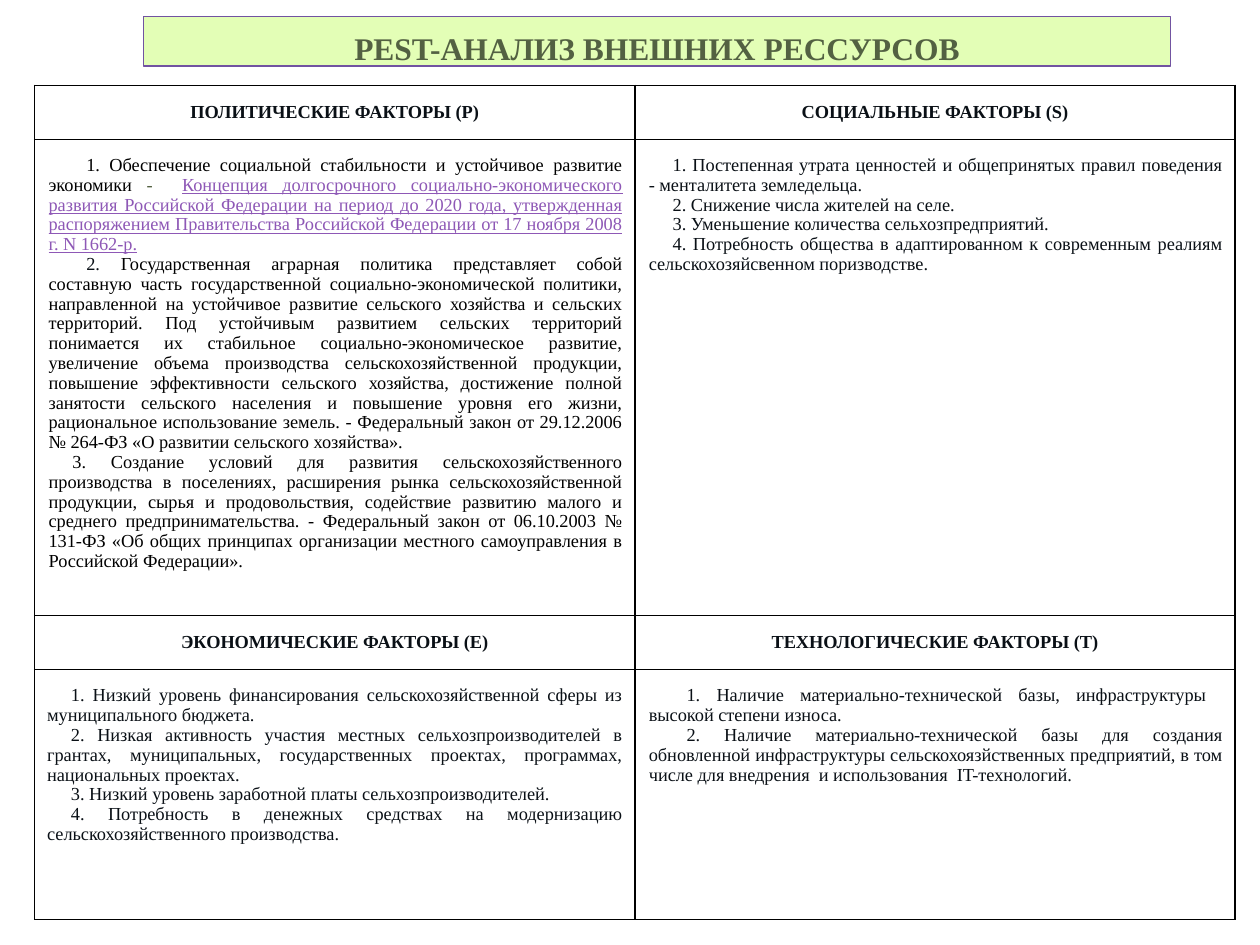
from dataclasses import dataclass
from pptx import Presentation
from pptx.dml.color import RGBColor as Rgb
from pptx.enum.shapes import MSO_SHAPE as Shape
from pptx.enum.text import MSO_ANCHOR as Anchor, PP_ALIGN as Align
from pptx.oxml import parse_xml
from pptx.oxml.ns import nsdecls
from pptx.util import Cm, Pt


@dataclass(frozen=True)
class Theme:
    """Holds the colours, font and type sizes of the slide."""
    font: str = "Times New Roman"
    title: float = 18
    body: float = 10.5
    lead: float = 0.97
    rule: float = 1
    ink: str = "0A1016"
    black: str = "000000"
    olive: str = "536142"
    link: str = "8E58B6"
    lime: str = "E3FEB6"
    frame: str = "7153A1"
    white: str = "FFFFFF"


THEME = Theme()
NEAR, FAR = 0.48, 0.76
HEADS = [
    ["ПОЛИТИЧЕСКИЕ ФАКТОРЫ (P)", "СОЦИАЛЬНЫЕ ФАКТОРЫ (S)"],
    ["ЭКОНОМИЧЕСКИЕ ФАКТОРЫ (E)", "ТЕХНОЛОГИЧЕСКИЕ ФАКТОРЫ (T)"],
]
POLICY = [
    (FAR, [
        ("1. Обеспечение социальной стабильности и устойчивое развитие экономики ", THEME.black),
        ("-  ", THEME.olive),
        ("Концепция долгосрочного социально-экономического развития Российской Федерации "
         "на период до 2020 года, утвержденная распоряжением Правительства Российской "
         "Федерации от 17 ноября 2008 г. N 1662-р.", THEME.link),
    ]),
    (FAR, [
        ("2. ", THEME.ink),
        ("Государственная аграрная политика представляет собой составную часть "
         "государственной социально-экономической политики, направленной на устойчивое "
         "развитие сельского хозяйства и сельских территорий. Под устойчивым развитием "
         "сельских территорий понимается их стабильное социально-экономическое развитие, "
         "увеличение объема производства сельскохозяйственной продукции, повышение "
         "эффективности сельского хозяйства, достижение полной занятости сельского "
         "населения и повышение уровня его жизни, рациональное использование земель. - "
         "Федеральный закон от 29.12.2006 № 264-ФЗ «О развитии сельского хозяйства».",
         THEME.black),
    ]),
    (NEAR, [
        ("3. Создание условий для развития сельскохозяйственного производства в поселениях, "
         "расширения рынка сельскохозяйственной продукции, сырья и продовольствия, "
         "содействие развитию малого и среднего предпринимательства. - Федеральный закон "
         "от 06.10.2003 № 131-ФЗ «Об общих принципах организации местного самоуправления "
         "в Российской Федерации».", THEME.black),
    ]),
]
SOCIAL = [
    "1. Постепенная утрата ценностей и общепринятых правил поведения - менталитета земледельца.",
    "2. Снижение числа жителей на селе.",
    "3. Уменьшение количества сельхозпредприятий.",
    "4. Потребность общества в адаптированном к современным реалиям сельскохозяйсвенном "
    "поризводстве.",
]
MONEY = [
    "1. Низкий уровень финансирования сельскохозяйственной сферы из муниципального бюджета.",
    "2. Низкая активность участия местных сельхозпроизводителей в грантах, муниципальных, "
    "государственных проектах, программах, национальных проектах.",
    "3. Низкий уровень заработной платы сельхозпроизводителей.",
    "4. Потребность в денежных средствах на модернизацию сельскохозяйственного производства.",
]
TECH = [
    "1. Наличие материально-технической базы, инфраструктуры  высокой степени износа.",
    "2. Наличие материально-технической базы для создания обновленной инфраструктуры "
    "сельскохоязйственных предприятий, в том числе для внедрения  и использования  "
    "IT-технологий.",
]


def plain(lines, indent):
    """Turns lines of text into items of one run each."""
    return [(indent, [(line, THEME.ink)]) for line in lines]


BODIES = [
    [(0.03, POLICY), (0.03, plain(SOCIAL, NEAR))],
    [(0, plain(MONEY, NEAR)), (0.03, plain(TECH, FAR))],
]


def style(para, size, color, align, bold=False):
    """Sets the font and alignment of a paragraph."""
    font = para.font
    font.name, font.size, font.bold = THEME.font, Pt(size), bold
    font.color.rgb = Rgb.from_string(color)
    para.alignment = align


def banner(slide, left, top, width, height):
    """Draws the framed title bar."""
    bar = slide.shapes.add_shape(Shape.RECTANGLE, Cm(left), Cm(top), Cm(width), Cm(height))
    bar.shadow.inherit = False
    bar.fill.solid()
    bar.fill.fore_color.rgb = Rgb.from_string(THEME.lime)
    bar.line.color.rgb = Rgb.from_string(THEME.frame)
    bar.line.width = Pt(0.75)
    frame = bar.text_frame
    frame.word_wrap = True
    frame.vertical_anchor = Anchor.TOP
    frame.margin_left = frame.margin_right = Cm(0.25)
    frame.margin_top = frame.margin_bottom = Cm(0.25)
    para = frame.paragraphs[0]
    para.text = "PEST-АНАЛИЗ ВНЕШНИХ РЕССУРСОВ"
    style(para, THEME.title, THEME.olive, Align.CENTER, True)


def dress(cell):
    """Gives a cell its margins, fill and four borders."""
    cell.margin_left = cell.margin_right = Cm(0.25)
    cell.margin_top = cell.margin_bottom = Cm(0.33)
    cell.fill.solid()
    cell.fill.fore_color.rgb = Rgb.from_string(THEME.white)
    props = cell._tc.get_or_add_tcPr()
    for spot, side in enumerate("LRTB"):
        props.insert(spot, parse_xml(
            f'<a:ln{side} {nsdecls("a")} w="{Pt(THEME.rule)}"><a:solidFill>'
            f'<a:srgbClr val="{THEME.black}"/></a:solidFill></a:ln{side}>'))


def head(cell, text):
    """Writes a factor heading."""
    dress(cell)
    para = cell.text_frame.paragraphs[0]
    para.text = text
    style(para, THEME.body, THEME.ink, Align.CENTER, True)


def body(cell, left, items):
    """Writes the justified list of one factor."""
    dress(cell)
    frame = cell.text_frame
    for spot, (indent, runs) in enumerate(items):
        para = frame.add_paragraph() if spot else frame.paragraphs[0]
        style(para, THEME.body, THEME.ink, Align.JUSTIFY)
        para.line_spacing = THEME.lead
        props = para._p.get_or_add_pPr()
        props.set("marL", str(Cm(left)))
        props.set("indent", str(Cm(indent)))
        for text, color in runs:
            run = para.add_run()
            run.text = text
            run.font.color.rgb = Rgb.from_string(color)
            if color == THEME.link:
                run.font.underline = True


def matrix(slide, left, top, width, rows):
    """Builds the table of four factors."""
    grid = slide.shapes.add_table(
        len(rows), 2, Cm(left), Cm(top), Cm(width), Cm(sum(rows))).table
    grid.first_row = grid.horz_banding = False
    for row, high in zip(grid.rows, rows):
        row.height = Cm(high)
    for band, (heads, bodies) in enumerate(zip(HEADS, BODIES)):
        for col in range(2):
            head(grid.cell(2 * band, col), heads[col])
            body(grid.cell(2 * band + 1, col), *bodies[col])


def main():
    """Builds and saves the slide."""
    deck = Presentation()
    deck.slide_width, deck.slide_height = Cm(25.4), Cm(19.05)
    slide = deck.slides.add_slide(deck.slide_layouts[6])
    banner(slide, 2.9, 0.33, 20.7, 1)
    matrix(slide, 0.7, 1.72, 24.2, [1.09, 9.6, 1.09, 5.04])
    deck.save("out.pptx")


if __name__ == "__main__":
    main()
